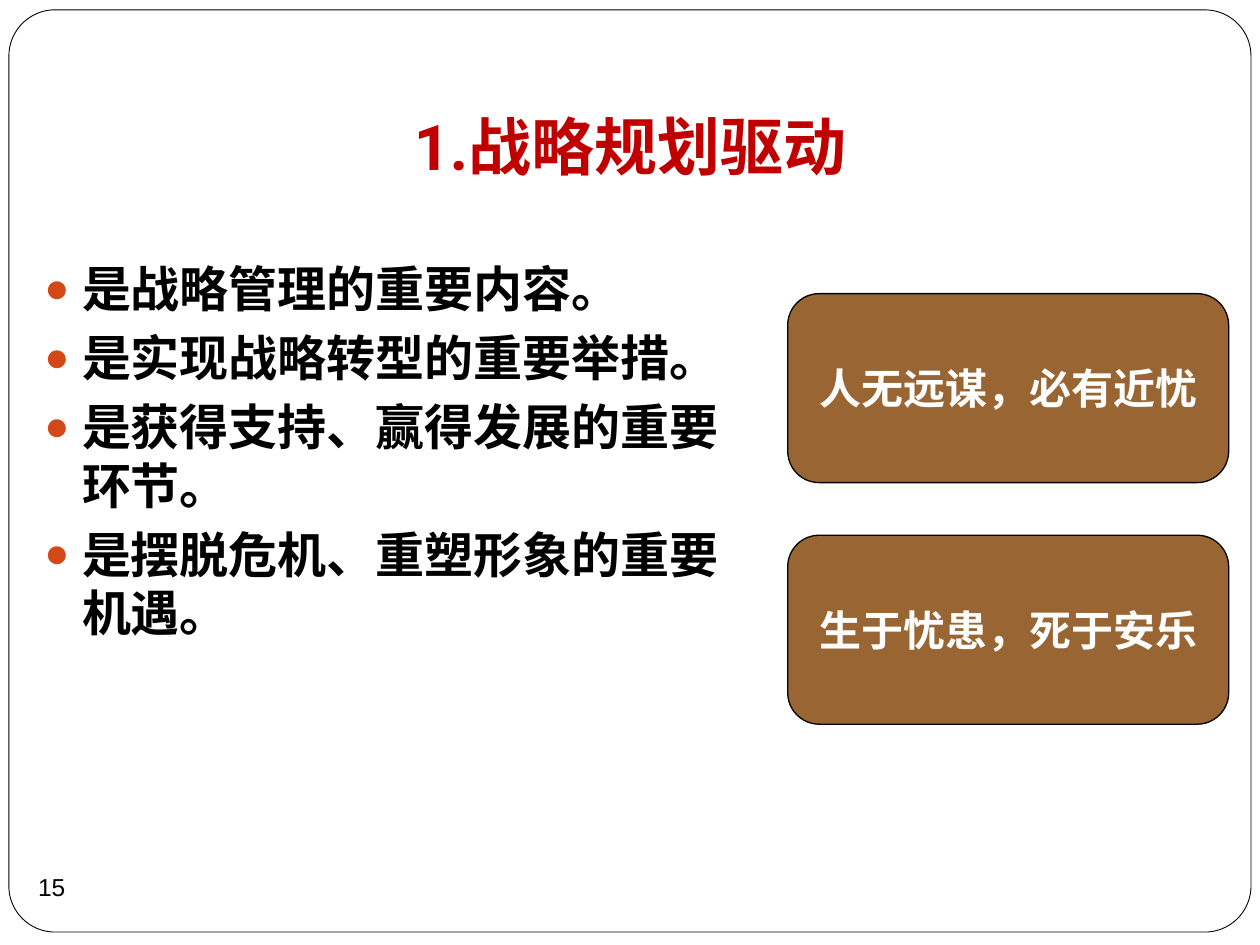
import pptx
import pptx.dml.color
import pptx.enum.shapes
import pptx.enum.text
import pptx.oxml
import pptx.oxml.ns
import pptx.util
from pptx.util import Cm

SHAPES = pptx.enum.shapes.MSO_SHAPE
ANCHOR = pptx.enum.text.MSO_ANCHOR
CENTER = pptx.enum.text.PP_ALIGN.CENTER


class StrategySlide:
    """Hold the style and the current slide, and add its elements."""

    colors = {
        "white": "FFFFFF",
        "black": "000000",
        "title": "C00000",
        "bullet": "D34817",
        "motto": "996633",
    }

    def __init__(self, presentation):
        self.slide = presentation.slides.add_slide(presentation.slide_layouts[1])

    def color(self, name):
        return pptx.dml.color.RGBColor.from_string(self.colors[name])

    def style(self, paragraph, font_name, size, color, bold=False):
        font = paragraph.font
        font.name = font_name
        font.size = pptx.util.Pt(size)
        font.bold = bold
        font.color.rgb = self.color(color)

    def place(self, shape, left, top, width, height):
        shape.left, shape.top = Cm(left), Cm(top)
        shape.width, shape.height = Cm(width), Cm(height)
        shape.text_frame.auto_size = pptx.enum.text.MSO_AUTO_SIZE.NONE

    def title(self, text, *position):
        shape = self.slide.shapes.title
        self.place(shape, *position)
        frame = shape.text_frame
        frame.text = text
        frame.vertical_anchor = ANCHOR.BOTTOM
        frame.margin_bottom = Cm(0.25)
        paragraph = frame.paragraphs[0]
        paragraph.alignment = CENTER
        self.style(paragraph, "Roboto", 36, "title", True)

    def bullets(self, lines, *position):
        shape = self.slide.placeholders[1]
        self.place(shape, *position)
        frame = shape.text_frame
        frame.text = "\n".join(lines)
        for index, paragraph in enumerate(frame.paragraphs):
            paragraph.space_before = pptx.util.Pt(5.8 if index else 0)
            self.bullet(paragraph)
            self.style(paragraph, "Times New Roman", 28, "black", True)

    def bullet(self, paragraph):
        properties = paragraph._p.get_or_add_pPr()
        properties.set("marL", str(Cm(0.76)))
        properties.set("indent", str(Cm(-0.76)))
        namespace = pptx.oxml.ns.nsdecls("a")
        for markup in (
            f'<a:buClr {namespace}><a:srgbClr val="{self.colors["bullet"]}"/></a:buClr>',
            f'<a:buSzPct {namespace} val="85000"/>',
            f'<a:buFont {namespace} typeface="Arial"/>',
            f'<a:buChar {namespace} char="●"/>',
        ):
            properties.append(pptx.oxml.parse_xml(markup))

    def shape(self, kind, left, top, width, height, fill=None, line_width=0):
        shape = self.slide.shapes.add_shape(
            kind, Cm(left), Cm(top), Cm(width), Cm(height)
        )
        shape.shadow.inherit = False
        if fill:
            shape.fill.solid()
            shape.fill.fore_color.rgb = self.color(fill)
        else:
            shape.fill.background()
        if line_width:
            shape.line.color.rgb = self.color("black")
            shape.line.width = pptx.util.Pt(line_width)
        else:
            shape.line.fill.background()
        return shape

    def frame(self, *position):
        shape = self.shape(SHAPES.ROUNDED_RECTANGLE, *position, "white", 0.5)
        shape.adjustments[0] = 0.05
        self.slide.shapes._spTree.insert(2, shape._element)

    def label(self, shape, text, size, color, bold=False):
        frame = shape.text_frame
        frame.text = text
        frame.word_wrap = False
        frame.vertical_anchor = ANCHOR.MIDDLE
        paragraph = frame.paragraphs[0]
        paragraph.alignment = CENTER
        self.style(paragraph, "Arial", size, color, bold)

    def page_number(self, text, *position):
        shape = self.shape(SHAPES.OVAL, *position)
        frame = shape.text_frame
        frame.margin_left = frame.margin_right = 0
        frame.margin_top = frame.margin_bottom = 0
        self.label(shape, text, 14, "black")

    def motto(self, text, *position):
        shape = self.shape(
            SHAPES.FLOWCHART_ALTERNATE_PROCESS, *position, "motto", 0.75
        )
        self.label(shape, text, 24, "white", True)


def main():
    presentation = pptx.Presentation()
    presentation.slide_width = Cm(25.4)
    presentation.slide_height = Cm(19.05)

    slide = StrategySlide(presentation)
    slide.frame(0.18, 0.2, 25.04, 18.59)
    slide.title("1.战略规划驱动", 1.27, 2.11, 22.86, 1.83)
    slide.bullets(
        [
            "是战略管理的重要内容。",
            "是实现战略转型的重要举措。",
            "是获得支持、赢得发展的重要环节。",
            "是摆脱危机、重塑形象的重要机遇。",
        ],
        0.64, 5.08, 14.4, 12.57,
    )
    slide.page_number("15", 0.41, 17.25, 1.27, 1.27)
    for row, motto in enumerate(["人无远谋，必有近忧", "生于忧患，死于安乐"]):
        slide.motto(motto, 15.88, 5.92 + row * 4.87, 8.89, 3.81)

    presentation.save("out.pptx")


if __name__ == "__main__":
    main()
